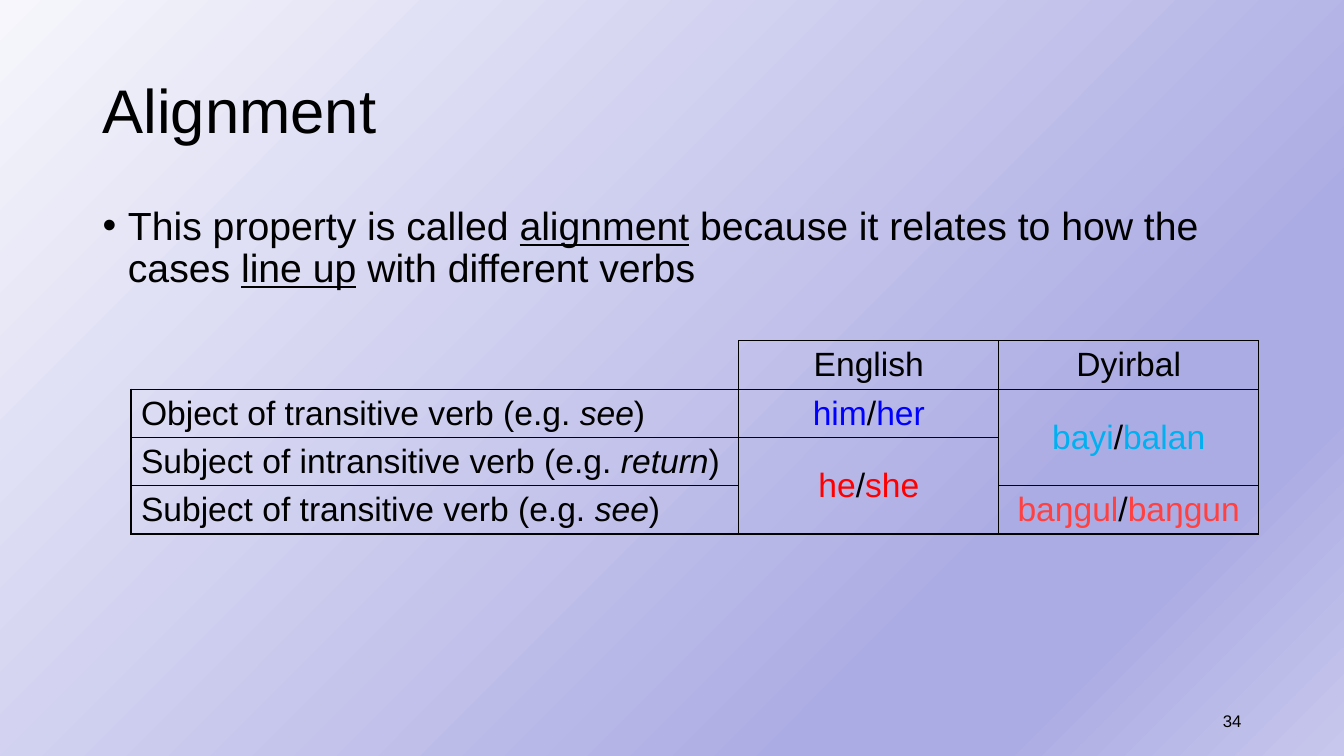
from lxml import etree
from pptx import Presentation, util as u
from pptx.dml import color
from pptx.enum import text
from pptx.oxml import ns

FONT = "Arial"
BLACK = "000000"
BACKDROP = [(0, "F6F6FC"), (74, "ACACE4"), (83, "ACACE4"), (100, "C7C7ED")]
ENGLISH_OBJECT, ENGLISH_SUBJECT = "0000FF", "FF0000"
DYIRBAL_ABSOLUTIVE, DYIRBAL_ERGATIVE = "00B0F0", "FF4141"
LEFT, CENTER, RIGHT = text.PP_ALIGN.LEFT, text.PP_ALIGN.CENTER, text.PP_ALIGN.RIGHT
MIDDLE = text.MSO_ANCHOR.MIDDLE


def rgb(value):
    return color.RGBColor.from_string(value)


def place(shape, box):
    shape.left, shape.top, shape.width, shape.height = map(u.Cm, box)


def write(paragraph, pieces, size, align=LEFT):
    """Fill a paragraph with (words, font settings) pieces."""
    paragraph.alignment = align
    paragraph.font.name, paragraph.font.size = FONT, u.Pt(size)
    paragraph.font.color.rgb = rgb(BLACK)
    for words, settings in pieces:
        run = paragraph.add_run()
        run.text = words
        run.font.italic = settings.get("italic")
        run.font.underline = settings.get("underline")
        if "color" in settings:
            run.font.color.rgb = rgb(settings["color"])


def paint_background(slide):
    fill = slide.background.fill
    fill.gradient()
    fill.gradient_angle = 315
    stops = slide.element.xpath(".//a:gsLst")[0]
    for stop in list(stops):
        stops.remove(stop)
    for percent, value in BACKDROP:
        stop = etree.SubElement(stops, ns.qn("a:gs"), pos=str(percent * 1000))
        etree.SubElement(stop, ns.qn("a:srgbClr"), val=value)


def add_title(slide, box):
    title = slide.shapes.title
    place(title, box)
    frame = title.text_frame
    frame.vertical_anchor = MIDDLE
    frame.auto_size = text.MSO_AUTO_SIZE.NONE
    write(frame.paragraphs[0], [("Alignment", {})], 44)
    frame.paragraphs[0].line_spacing = 0.9


def add_explanation(slide, box):
    body = slide.placeholders[1]
    place(body, box)
    body.text_frame.auto_size = text.MSO_AUTO_SIZE.NONE
    bullet = body.text_frame.paragraphs[0]
    write(bullet, [
        ("This property is called ", {}),
        ("alignment", {"underline": True}),
        (" because it relates to how the cases ", {}),
        ("line up", {"underline": True}),
        (" with different verbs", {}),
    ], 28)
    bullet.line_spacing, bullet.space_before = 0.9, u.Pt(10)
    properties = bullet._p.get_or_add_pPr()
    properties.set("marL", str(u.Cm(0.64)))
    properties.set("indent", str(u.Cm(-0.64)))


def role(words, verb):
    return [(f"{words} (e.g. ", {}), (verb, {"italic": True}), (")", {})]


def pair(masculine, feminine, value):
    return [(masculine, {"color": value}), ("/", {}), (feminine, {"color": value})]


def draw_borders(cell, sides):
    """Give the named sides (letters of LRTB) a thin line and the others none."""
    properties = cell._tc.get_or_add_tcPr()
    for side in "LRTB":
        line = etree.SubElement(properties, ns.qn(f"a:ln{side}"), w=str(u.Pt(1)))
        if side in sides:
            fill = etree.SubElement(line, ns.qn("a:solidFill"))
            etree.SubElement(fill, ns.qn("a:srgbClr"), val=BLACK)
        else:
            etree.SubElement(line, ns.qn("a:noFill"))


def add_case_table(slide, box):
    rows = [
        [[], [("English", {})], [("Dyirbal", {})]],
        [role("Object of transitive verb", "see"),
         pair("him", "her", ENGLISH_OBJECT),
         pair("bayi", "balan", DYIRBAL_ABSOLUTIVE)],
        [role("Subject of intransitive verb", "return"),
         pair("he", "she", ENGLISH_SUBJECT), []],
        [role("Subject of transitive verb", "see"), [],
         pair("baŋgul", "baŋgun", DYIRBAL_ERGATIVE)],
    ]
    cases = slide.shapes.add_table(len(rows), 3, *map(u.Cm, box)).table
    cases.first_row = cases.horz_banding = False
    language_width = 6.55
    widths = (box[2] - 2 * language_width, language_width, language_width)
    for column, width in zip(cases.columns, widths):
        column.width = u.Cm(width)
    for r, row in enumerate(rows):
        for c, pieces in enumerate(row):
            cell = cases.cell(r, c)
            draw_borders(cell, "LRTB" if r or c else "RB")
            cell.fill.background()
            cell.margin_top = cell.margin_bottom = u.Cm(0.1)
            cell.vertical_anchor = MIDDLE
            write(cell.text_frame.paragraphs[0], pieces, 24, CENTER if c else LEFT)
    cases.cell(1, 2).merge(cases.cell(2, 2))
    cases.cell(2, 1).merge(cases.cell(3, 1))


def add_page_number(slide, box):
    frame = slide.shapes.add_textbox(*map(u.Cm, box)).text_frame
    frame.word_wrap = True
    frame.vertical_anchor = MIDDLE
    write(frame.paragraphs[0], [("34", {})], 12, RIGHT)


def main():
    deck = Presentation()
    deck.slide_width, deck.slide_height = u.Cm(33.87), u.Cm(19.05)
    slide = deck.slides.add_slide(deck.slide_layouts[1])
    paint_background(slide)
    add_title(slide, (2.33, 1.01, 29.21, 3.68))
    add_explanation(slide, (2.33, 5.08, 29.21, 2.51))
    add_page_number(slide, (23.92, 17.66, 7.62, 1.01))
    add_case_table(slide, (3.3, 8.59, 28.42, 4.8))
    deck.save("out.pptx")


if __name__ == "__main__":
    main()
